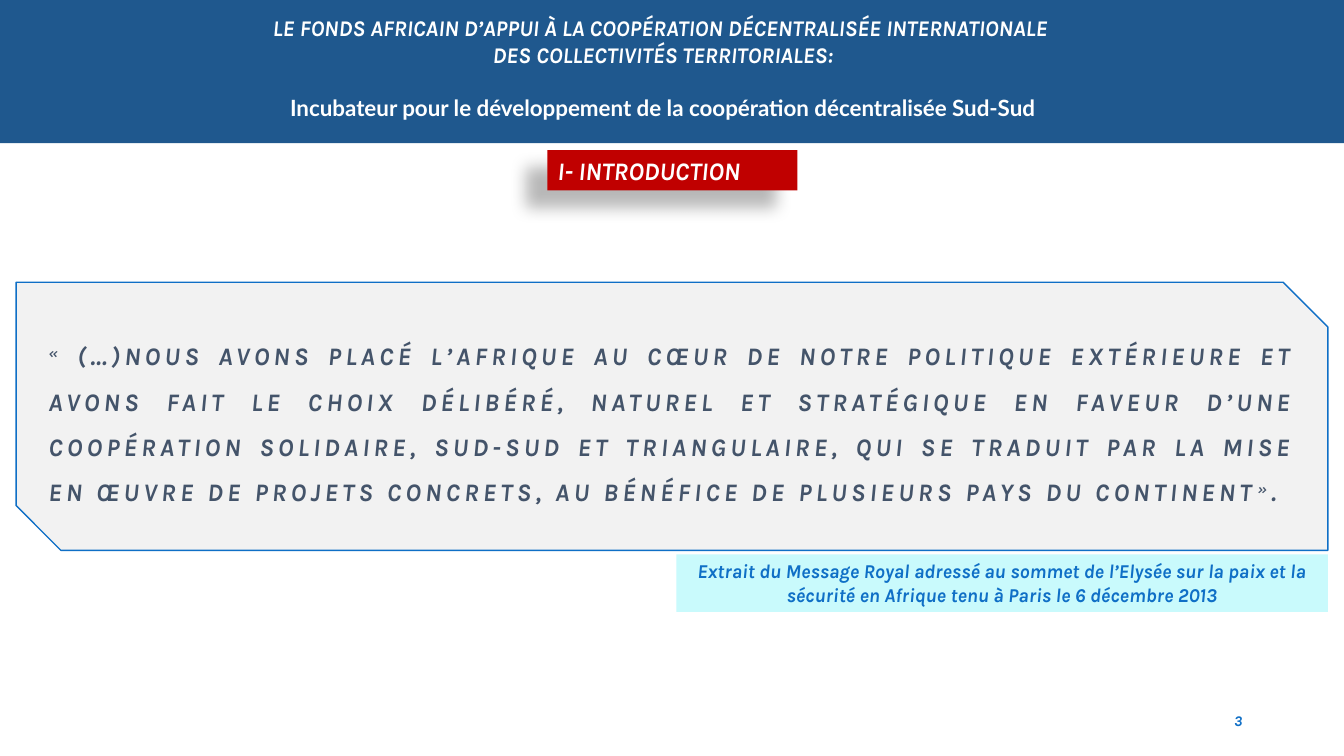
"""Build the introduction slide on the African decentralised cooperation fund."""
from lxml import etree
from pptx import Presentation
from pptx.dml.color import RGBColor
from pptx.enum.shapes import MSO_SHAPE
from pptx.enum.text import MSO_ANCHOR, PP_ALIGN
from pptx.oxml import parse_xml
from pptx.oxml.ns import nsdecls
from pptx.util import Inches, Pt

COLORS = {"white": "FFFFFF", "navy": "1F588E", "blue": "0F6FC6", "slate": "44546A",
          "grey": "F2F2F2", "red": "C00000", "cyan": "C9FAFC", "black": "000000"}


def add_block(at, kind=None, fill=None, line=None, anchor=MSO_ANCHOR.TOP):
    """Add a filled shape, or a text box when no kind is given."""
    box = [Inches(v) for v in at]
    if kind is None:
        sp = s.shapes.add_textbox(*box)
    else:
        sp = s.shapes.add_shape(kind, *box)
        sp.shadow.inherit = False
        sp.fill.solid()
        sp.fill.fore_color.rgb = RGBColor.from_string(COLORS[fill])
        if line:
            sp.line.color.rgb = RGBColor.from_string(COLORS[line])
            sp.line.width = Pt(1)
        else:
            sp.line.fill.background()
    sp.text_frame.word_wrap = True
    sp.text_frame.vertical_anchor = anchor
    return sp


def add_text(p, text, size=18, color="white", font="Karla", italic=True,
             align=PP_ALIGN.LEFT, spacing=None, baseline=None):
    """Add a bold run to a paragraph; spacing is in points, baseline in percent."""
    p.alignment = align
    for i, part in enumerate(text.split("\n")):
        if i:
            p.add_line_break()
        r = p.add_run()
        r.text = part
        r.font.name, r.font.size = font, Pt(size)
        r.font.bold, r.font.italic = True, italic
        r.font.color.rgb = RGBColor.from_string(COLORS[color])
        rPr = r.font._element
        if spacing:
            rPr.set("spc", str(spacing * 100))
        if baseline:
            rPr.set("baseline", str(baseline * 1000))


prs = Presentation()
prs.slide_width, prs.slide_height = Inches(13.33), Inches(7.5)
s = prs.slides.add_slide(prs.slide_layouts[6])

add_block((0, 0, 13.33, 1.42), MSO_SHAPE.RECTANGLE, "navy")

number = add_block((11.81, 6.95, 0.61, 0.4), anchor=MSO_ANCHOR.MIDDLE)
add_text(number.text_frame.paragraphs[0], "3", size=10.5, color="blue", align=PP_ALIGN.RIGHT)

title = add_block((1.34, 0.14, 10.47, 1.18))
tf = title.text_frame
tf.margin_top = tf.margin_bottom = 0
add_text(tf.paragraphs[0],
         "LE FONDS AFRICAIN D’APPUI À LA COOPÉRATION DÉCENTRALISÉE INTERNATIONALE \n"
         "DES COLLECTIVITÉS TERRITORIALES:", size=16, align=PP_ALIGN.CENTER)
p = tf.add_paragraph()
p.space_before = Pt(19)
add_text(p, "Incubateur pour le développement de la coopération décentralisée Sud-Sud",
         size=16, font="Lato", italic=False, align=PP_ALIGN.CENTER)

quote = add_block((0.16, 2.8, 13.01, 2.66), MSO_SHAPE.SNIP_2_DIAG_RECTANGLE,
                  "grey", "blue", MSO_ANCHOR.MIDDLE)
p = quote.text_frame.paragraphs[0]
p.line_spacing, p.space_after = 1.5, Pt(8)
for text, baseline in [
    ("«", 30),
    (" (…)NOUS AVONS PLACÉ L’AFRIQUE AU CŒUR DE NOTRE POLITIQUE EXTÉRIEURE ET AVONS FAIT "
     "LE CHOIX DÉLIBÉRÉ, NATUREL ET STRATÉGIQUE EN FAVEUR D’UNE COOPÉRATION SOLIDAIRE, "
     "SUD-SUD ET TRIANGULAIRE, QUI SE TRADUIT PAR LA MISE EN ŒUVRE DE PROJETS CONCRETS, "
     "AU BÉNÉFICE DE PLUSIEURS PAYS DU CONTINENT", None),
    ("»", 30),
    (".", None),
]:
    add_text(p, text, color="slate", align=PP_ALIGN.JUSTIFY, spacing=3, baseline=baseline)

heading = add_block((5.43, 1.49, 2.48, 0.4), MSO_SHAPE.RECTANGLE, "red")
add_text(heading.text_frame.paragraphs[0], "I- INTRODUCTION")
effects = heading._element.spPr.find("{*}effectLst")
shadow = parse_xml(
    f'<a:outerShdw {nsdecls("a")} blurRad="{Pt(11.8)}" dist="{Pt(19.7)}" '
    f'dir="{141 * 60000}" algn="tr" rotWithShape="0"/>')
color = etree.SubElement(shadow, shadow.tag.replace("outerShdw", "srgbClr"), val=COLORS["black"])
etree.SubElement(color, shadow.tag.replace("outerShdw", "alpha"), val="28000")
effects.append(shadow)

source = add_block((6.71, 5.5, 6.46, 0.57), MSO_SHAPE.RECTANGLE, "cyan")
add_text(source.text_frame.paragraphs[0],
         "Extrait du Message Royal adressé au sommet de l’Elysée sur la paix et la sécurité "
         "en Afrique tenu à Paris le 6 décembre 2013",
         size=14, color="blue", align=PP_ALIGN.CENTER)

prs.save("out.pptx")
